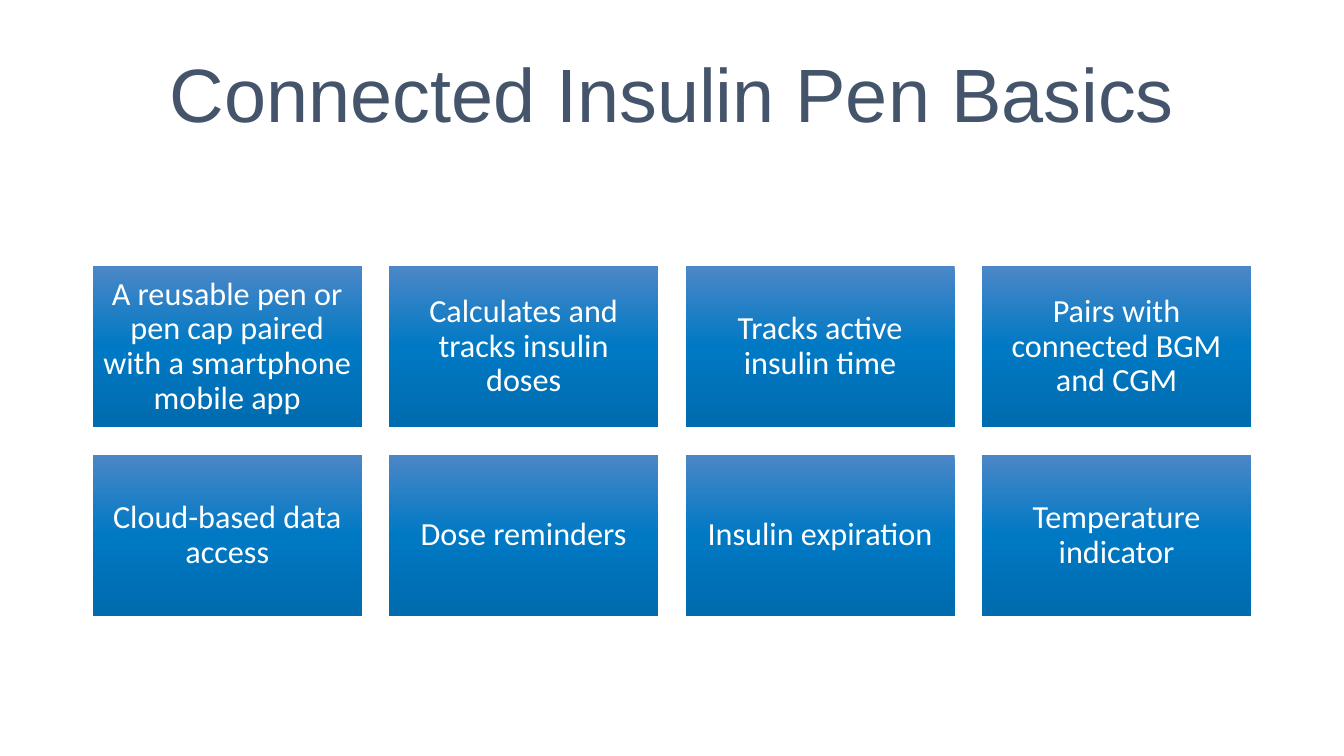
from copy import deepcopy

from pptx import Presentation
from pptx.dml.color import RGBColor
from pptx.enum.shapes import MSO_SHAPE
from pptx.enum.text import MSO_ANCHOR, PP_ALIGN
from pptx.oxml.ns import qn
from pptx.util import Inches, Pt

TITLE = "Connected Insulin Pen Basics"
FEATURES = [
    "A reusable pen or pen cap paired with a smartphone mobile app",
    "Calculates and tracks insulin doses",
    "Tracks active insulin time",
    "Pairs with connected BGM and CGM",
    "Cloud-based data access",
    "Dose reminders",
    "Insulin expiration",
    "Temperature indicator",
]

SLATE = RGBColor(0x44, 0x54, 0x6A)
WHITE = RGBColor(0xFF, 0xFF, 0xFF)
CARD_GRADIENT = [
    (0, RGBColor(0x4B, 0x87, 0xC7)),
    (0.5, RGBColor(0x00, 0x79, 0xC4)),
    (1, RGBColor(0x00, 0x6B, 0xAE)),
]

COLUMNS = 4
GRID_LEFT, GRID_TOP = 0.92, 2.64
CARD_WIDTH, CARD_HEIGHT, GAP = 2.67, 1.6, 0.27
CARD_INSET = Inches(0.1)


def write(frame, text, font_name, size, color):
    """Put one centred paragraph in the middle of a text frame."""
    frame.word_wrap = True
    frame.vertical_anchor = MSO_ANCHOR.MIDDLE
    frame.text = text
    paragraph = frame.paragraphs[0]
    paragraph.alignment = PP_ALIGN.CENTER
    paragraph.line_spacing = 0.9
    paragraph.font.name = font_name
    paragraph.font.size = Pt(size)
    paragraph.font.color.rgb = color


def fill_with_gradient(shape):
    shape.fill.gradient()
    shape.fill.gradient_angle = 270
    stop_list = shape._element.spPr.find(qn("a:gradFill")).find(qn("a:gsLst"))
    stop_list.append(deepcopy(stop_list[-1]))
    for stop, (position, color) in zip(shape.fill.gradient_stops, CARD_GRADIENT):
        stop.position = position
        stop.color.rgb = color


def add_card(slide, index, feature):
    row, column = divmod(index, COLUMNS)
    card = slide.shapes.add_shape(
        MSO_SHAPE.RECTANGLE,
        Inches(GRID_LEFT + column * (CARD_WIDTH + GAP)),
        Inches(GRID_TOP + row * (CARD_HEIGHT + GAP)),
        Inches(CARD_WIDTH),
        Inches(CARD_HEIGHT),
    )
    card.shadow.inherit = False
    card.line.fill.background()
    fill_with_gradient(card)
    frame = card.text_frame
    frame.margin_left = frame.margin_right = CARD_INSET
    frame.margin_top = frame.margin_bottom = CARD_INSET
    write(frame, feature, "Calibri", 23, WHITE)


def main():
    presentation = Presentation()
    presentation.slide_width = Inches(13.33)
    presentation.slide_height = Inches(7.5)
    slide = presentation.slides.add_slide(presentation.slide_layouts[5])

    title = slide.shapes.title
    title.left, title.top = Inches(0), Inches(0.25)
    title.width, title.height = presentation.slide_width, Inches(1.45)
    write(title.text_frame, TITLE, "Arial", 54, SLATE)

    for index, feature in enumerate(FEATURES):
        add_card(slide, index, feature)

    presentation.save("out.pptx")


if __name__ == "__main__":
    main()
